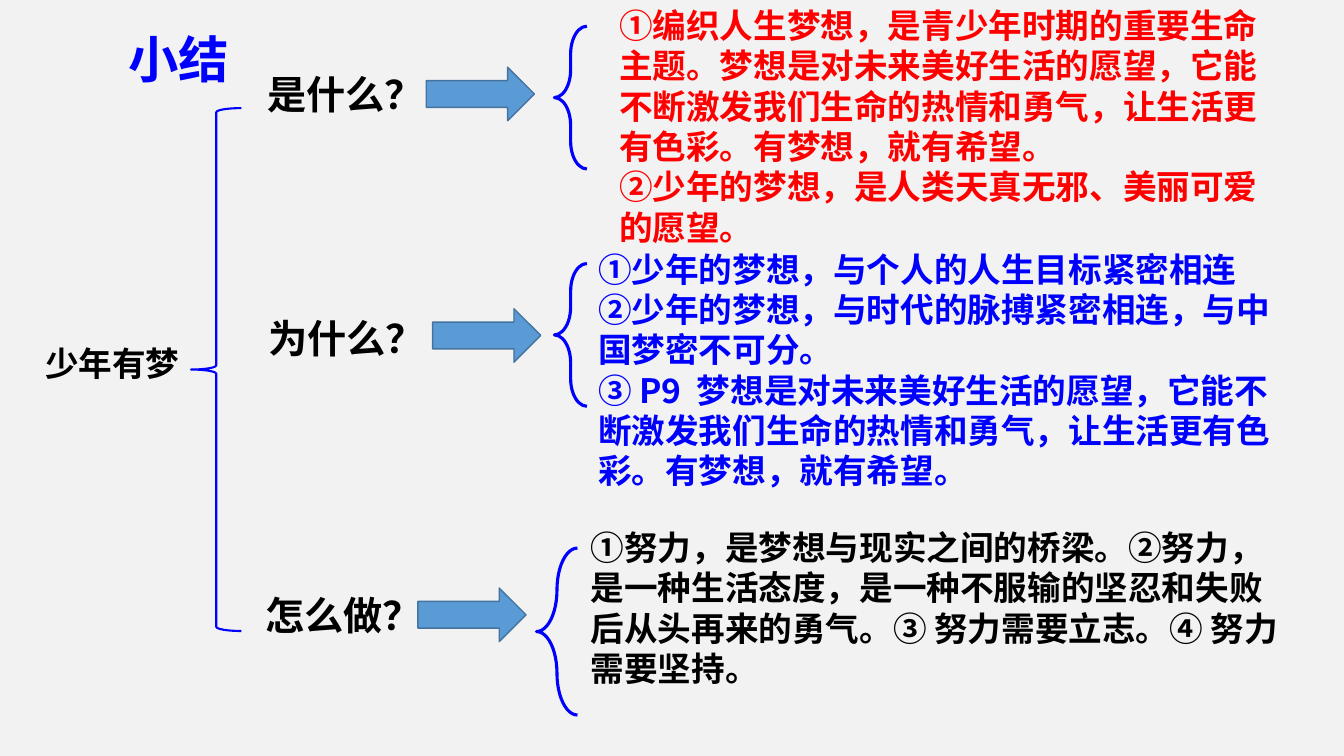
from dataclasses import dataclass

from pptx import Presentation
from pptx import util as u
from pptx.dml.color import RGBColor
from pptx.enum import shapes, text
from pptx.oxml.ns import qn

PX = 9525  # 96 px to the inch
FONT = "Noto Sans CJK SC"
BLACK, BLUE, RED = "000000", "0000FF", "FF0000"
Box = tuple[int, int, int, int]


@dataclass
class Branch:
    question: str
    question_box: Box
    arrow_box: Box
    brace_box: Box
    brace_curve: float
    answers: list[str]
    answer_box: Box
    color: str


BRANCHES = [
    Branch("是什么？", (245, 62, 172, 55), (406, 64, 103, 51),
           (528, 25, 31, 136), 0.853,
           ["①编织人生梦想，是青少年时期的重要生命主题。梦想是对未来美好生活的愿望，"
            "它能不断激发我们生命的热情和勇气，让生活更有色彩。有梦想，就有希望。",
            "②少年的梦想，是人类天真无邪、美丽可爱的愿望。"],
           (580, 0, 653, 288), RED),
    Branch("为什么？", (246, 295, 162, 55), (412, 294, 103, 51),
           (528, 251, 31, 136), 0.853,
           ["①少年的梦想，与个人的人生目标紧密相连",
            "②少年的梦想，与时代的脉搏紧密相连，与中国梦密不可分。",
            "③ P9  梦想是对未来美好生活的愿望，它能不断激发我们生命的热情和勇气，"
            "让生活更有色彩。有梦想，就有希望。"],
           (560, 232, 678, 423), BLUE),
    Branch("怎么做？", (243, 558, 162, 55), (398, 560, 103, 51),
           (511, 522, 39, 159), 1.756,
           ["①努力，是梦想与现实之间的桥梁。②努力，是一种生活态度，"
            "是一种不服输的坚忍和失败后从头再来的勇气。③ 努力需要立志。④ 努力需要坚持。"],
           (553, 497, 680, 300), BLACK),
]


def rgb(color: str) -> RGBColor:
    return RGBColor.from_string(color)


def emu(box: Box) -> list[int]:
    return [side * PX for side in box]


def write(holder, box: Box, lines: list[str], *, size: int = 24,
          color: str = BLACK, align=text.PP_ALIGN.LEFT) -> None:
    """Place a text box or placeholder and fill it with unbulleted paragraphs."""
    holder.left, holder.top, holder.width, holder.height = emu(box)
    frame = holder.text_frame
    frame.word_wrap = True
    frame.auto_size = text.MSO_AUTO_SIZE.NONE
    frame.vertical_anchor = text.MSO_ANCHOR.TOP
    for number, line in enumerate(lines):
        paragraph = frame.add_paragraph() if number else frame.paragraphs[0]
        paragraph.alignment = align
        paragraph.line_spacing = 1.0
        paragraph.space_before = u.Pt(0)
        properties = paragraph._p.get_or_add_pPr()
        properties.set("marL", "0")
        properties.set("indent", "0")
        properties.append(properties.makeelement(qn("a:buNone"), {}))
        run = paragraph.add_run()
        run.text = line
        run.font.size, run.font.bold, run.font.name = u.Pt(size), True, FONT
        run.font.color.rgb = rgb(color)
        east_asian = run._r.rPr.makeelement(qn("a:ea"), {"typeface": FONT})
        run._r.rPr.append(east_asian)


def add_label(slide, box: Box, words: str, **look) -> None:
    write(slide.shapes.add_textbox(*emu(box)), box, [words], **look)


def add_brace(slide, box: Box, weight: float, curve: float = 0.083) -> None:
    brace = slide.shapes.add_shape(shapes.MSO_SHAPE.LEFT_BRACE, *emu(box))
    brace.adjustments[0] = curve
    brace.shadow.inherit = False
    brace.fill.background()
    brace.line.color.rgb = rgb(BLUE)
    brace.line.width = u.Pt(weight)


def add_arrow(slide, box: Box) -> None:
    arrow = slide.shapes.add_shape(shapes.MSO_SHAPE.RIGHT_ARROW, *emu(box))
    arrow.shadow.inherit = False
    arrow.fill.solid()
    arrow.fill.fore_color.rgb = rgb("5B9BD5")
    arrow.line.color.rgb = rgb("43739E")
    arrow.line.width = u.Pt(1)


def main() -> None:
    deck = Presentation()
    deck.slide_width, deck.slide_height = 1280 * PX, 720 * PX
    slide = deck.slides.add_slide(deck.slide_layouts.get_by_name("Comparison"))
    slide.background.fill.solid()
    slide.background.fill.fore_color.rgb = rgb("F2F2F2")

    title, *bodies = slide.placeholders
    write(title, (50, 22, 240, 71), ["小结"], size=36, color=BLUE,
          align=text.PP_ALIGN.CENTER)
    add_label(slide, (0, 322, 214, 48), "少年有梦", align=text.PP_ALIGN.CENTER)
    add_brace(slide, (182, 103, 48, 498), 1.5)

    for branch, body in zip(BRANCHES, bodies):
        add_label(slide, branch.question_box, branch.question, size=28)
        add_arrow(slide, branch.arrow_box)
        add_brace(slide, branch.brace_box, 2.25, branch.brace_curve)
        write(body, branch.answer_box, branch.answers, color=branch.color)
    for unused in bodies[len(BRANCHES):]:
        unused.element.getparent().remove(unused.element)

    deck.save("out.pptx")


if __name__ == "__main__":
    main()
